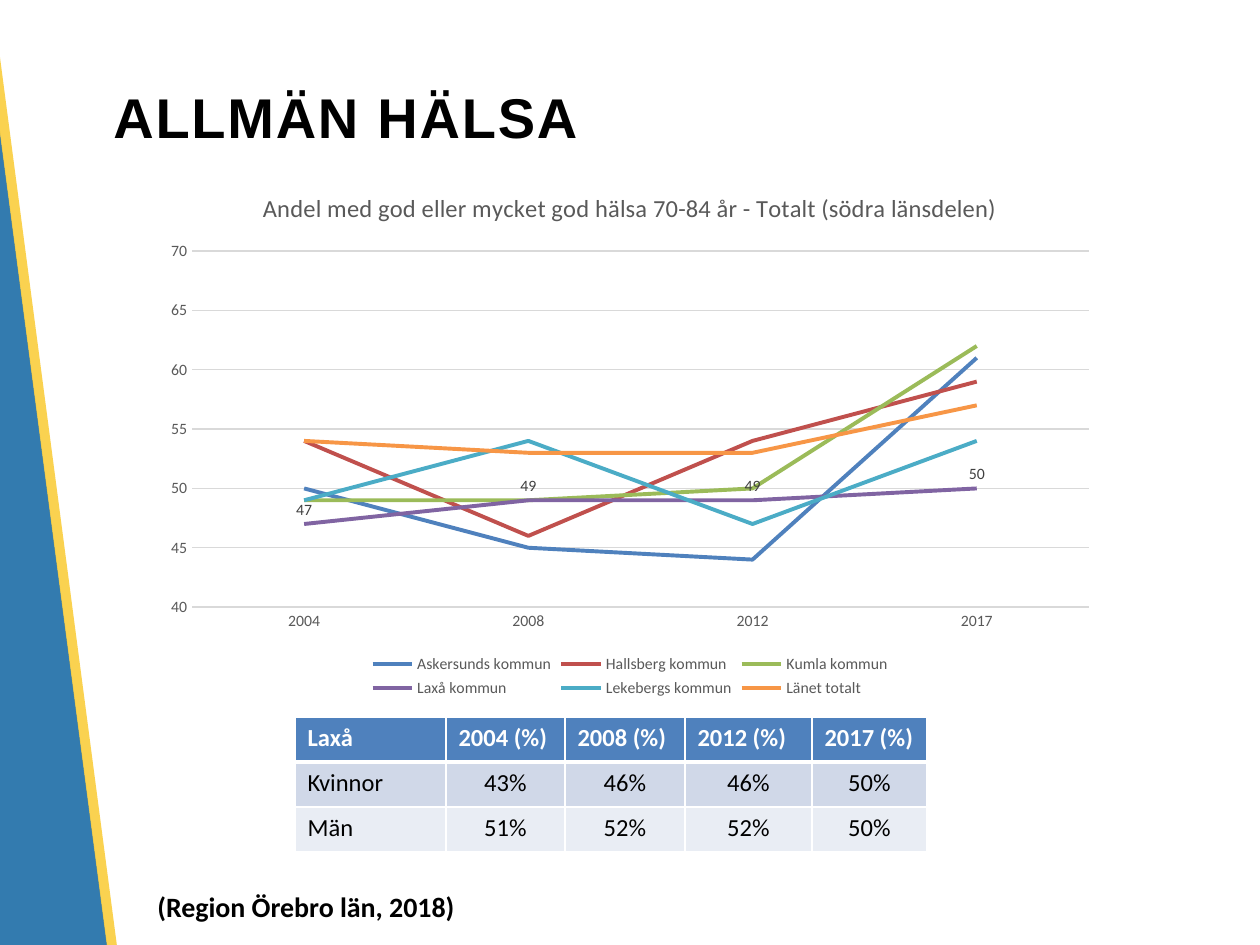
import pptx
import pptx.util
import pptx.chart.data
import pptx.dml.color
import pptx.enum.chart
import pptx.enum.shapes
import pptx.enum.text
import pptx.oxml.ns
import lxml.etree

EMU_PER_PX = 914400 / 126
COLORS = {
    "black": "000000", "white": "FFFFFF", "stripe blue": "005B9C", "stripe yellow": "FAC828",
    "header": "4F81BD", "band dark": "D0D8E8", "band light": "E9EDF4",
    "axis text": "595959", "label text": "404040", "grid": "D9D9D9",
    "Askersunds kommun": "4F81BD", "Hallsberg kommun": "C0504D", "Kumla kommun": "9BBB59",
    "Laxå kommun": "8064A2", "Lekebergs kommun": "4BACC6", "Länet totalt": "F79646",
}
YEARS = ["2004", "2008", "2012", "2017"]
HEALTH_SHARES = {
    "Askersunds kommun": [50, 45, 44, 61],
    "Hallsberg kommun": [54, 46, 54, 59],
    "Kumla kommun": [49, 49, 50, 62],
    "Laxå kommun": [47, 49, 49, 50],
    "Lekebergs kommun": [49, 54, 47, 54],
    "Länet totalt": [54, 53, 53, 57],
}
LAXA_ROWS = [
    ["Laxå"] + [f"{year} (%)" for year in YEARS],
    ["Kvinnor", "43%", "46%", "46%", "50%"],
    ["Män", "51%", "52%", "52%", "50%"],
]


def px(length):
    return pptx.util.Emu(round(length * EMU_PER_PX))


def rgb(name):
    return pptx.dml.color.RGBColor.from_string(COLORS[name])


def style_font(font, size, color, bold=False, face="Calibri"):
    font.size = pptx.util.Pt(size)
    font.name = face
    font.bold = bold
    font.color.rgb = rgb(color)


def add_child(parent, tag, **attributes):
    child = lxml.etree.SubElement(parent, pptx.oxml.ns.qn(tag))
    for key, value in attributes.items():
        child.set(key, str(value))
    return child


def add_stripe(slide, box, color, opacity):
    stripe = slide.shapes.add_shape(pptx.enum.shapes.MSO_SHAPE.RECTANGLE, *map(px, box))
    stripe.rotation = 352.5
    stripe.shadow.inherit = False
    stripe.line.fill.background()
    stripe.fill.solid()
    stripe.fill.fore_color.rgb = rgb(color)
    for color_element in stripe.fill._xPr.iter(pptx.oxml.ns.qn("a:srgbClr")):
        add_child(color_element, "a:alpha", val=opacity * 1000)


def add_side_stripes(slide, left, top):
    add_stripe(slide, (left, top, 115, 1428), "stripe blue", 80)
    add_stripe(slide, (left + 113, top - 16, 10, 1426), "stripe yellow", 81)


def add_text(slide, box, text, size, face, anchor, wrap):
    frame = slide.shapes.add_textbox(*map(px, box)).text_frame
    frame.word_wrap = wrap
    frame.vertical_anchor = anchor
    run = frame.paragraphs[0].add_run()
    run.text = text
    style_font(run.font, size, "black", bold=True, face=face)
    return run


def add_heading(slide, box):
    run = add_text(slide, box, "ALLMÄN HÄLSA", 32, "Arial",
                   pptx.enum.text.MSO_ANCHOR.MIDDLE, True)
    run.font._element.set("spc", "100")


def add_source_note(slide, box):
    add_text(slide, box, "(Region Örebro län, 2018)", 16, "Calibri",
             pptx.enum.text.MSO_ANCHOR.TOP, False)


def style_axes(chart):
    for axis in (chart.category_axis, chart.value_axis):
        axis.major_tick_mark = pptx.enum.chart.XL_TICK_MARK.NONE
        axis.minor_tick_mark = pptx.enum.chart.XL_TICK_MARK.NONE
        style_font(axis.tick_labels.font, 9, "axis text")
    shares = chart.value_axis
    shares.minimum_scale, shares.maximum_scale, shares.major_unit = 40, 70, 5
    shares.tick_labels.number_format = "0"
    shares.tick_labels.number_format_is_linked = False
    shares.format.line.fill.background()
    shares.has_major_gridlines = True
    for line in (shares.major_gridlines.format.line, chart.category_axis.format.line):
        line.color.rgb = rgb("grid")
        line.width = pptx.util.Pt(0.75)


def add_health_chart(slide, box):
    data = pptx.chart.data.CategoryChartData(number_format="0")
    data.categories = YEARS
    for municipality, shares in HEALTH_SHARES.items():
        data.add_series(municipality, shares)
    chart = slide.shapes.add_chart(
        pptx.enum.chart.XL_CHART_TYPE.LINE, *map(px, box), data).chart
    style_font(chart.font, 10, "black")

    chart.has_title = True
    chart.chart_title.include_in_layout = False
    title = chart.chart_title.text_frame.paragraphs[0].add_run()
    title.text = "Andel med god eller mycket god hälsa 70-84 år - Totalt (södra länsdelen)"
    style_font(title.font, 14, "axis text")

    chart.has_legend = True
    chart.legend.position = pptx.enum.chart.XL_LEGEND_POSITION.BOTTOM
    chart.legend.include_in_layout = False
    style_font(chart.legend.font, 9, "axis text")
    style_axes(chart)

    plot = chart.plots[0]
    plot.vary_by_categories = False
    for series in plot.series:
        series.smooth = False
        series.marker.style = pptx.enum.chart.XL_MARKER_STYLE.NONE
        series.format.line.color.rgb = rgb(series.name)
        series.format.line.width = pptx.util.Pt(2.25)
        if series.name == "Laxå kommun":
            labels = series.data_labels
            labels.show_value = True
            labels.number_format = "0"
            labels.number_format_is_linked = False
            labels.position = pptx.enum.chart.XL_LABEL_POSITION.ABOVE
            style_font(labels.font, 9, "label text")


def add_cell_borders(cell, top, bottom):
    properties = cell._tc.get_or_add_tcPr()
    for side, points in (("L", 1), ("R", 1), ("T", top), ("B", bottom)):
        line = add_child(properties, f"a:ln{side}", w=pptx.util.Pt(points))
        add_child(add_child(line, "a:solidFill"), "a:srgbClr", val=COLORS["white"])


def add_laxa_table(slide, left, top):
    widths, row_height = [151, 119, 120, 127, 115], 45
    table = slide.shapes.add_table(
        len(LAXA_ROWS), len(widths), px(left), px(top),
        px(sum(widths)), px(row_height * len(LAXA_ROWS))).table
    for column, width in zip(table.columns, widths):
        column.width = px(width)
    fills = ["header", "band dark", "band light"]
    for r, (texts, fill) in enumerate(zip(LAXA_ROWS, fills)):
        is_header = r == 0
        table.rows[r].height = px(row_height)
        for c, text in enumerate(texts):
            cell = table.cell(r, c)
            add_cell_borders(cell, 3 if r == 1 else 1, 3 if is_header else 1)
            cell.fill.solid()
            cell.fill.fore_color.rgb = rgb(fill)
            paragraph = cell.text_frame.paragraphs[0]
            if not is_header and c > 0:
                paragraph.alignment = pptx.enum.text.PP_ALIGN.CENTER
            run = paragraph.add_run()
            run.text = text
            style_font(run.font, 14, "white" if is_header else "black", bold=is_header)


def main():
    presentation = pptx.Presentation()
    presentation.slide_width, presentation.slide_height = px(1260), px(945)
    slide = presentation.slides.add_slide(presentation.slide_layouts[6])
    add_side_stripes(slide, -66, -207)
    add_heading(slide, (101, 37, 1090, 158))
    add_laxa_table(slide, 295, 717)
    add_source_note(slide, (145, 883, 343, 47))
    add_health_chart(slide, (152, 169, 956, 533))
    presentation.save("out.pptx")


if __name__ == "__main__":
    main()
